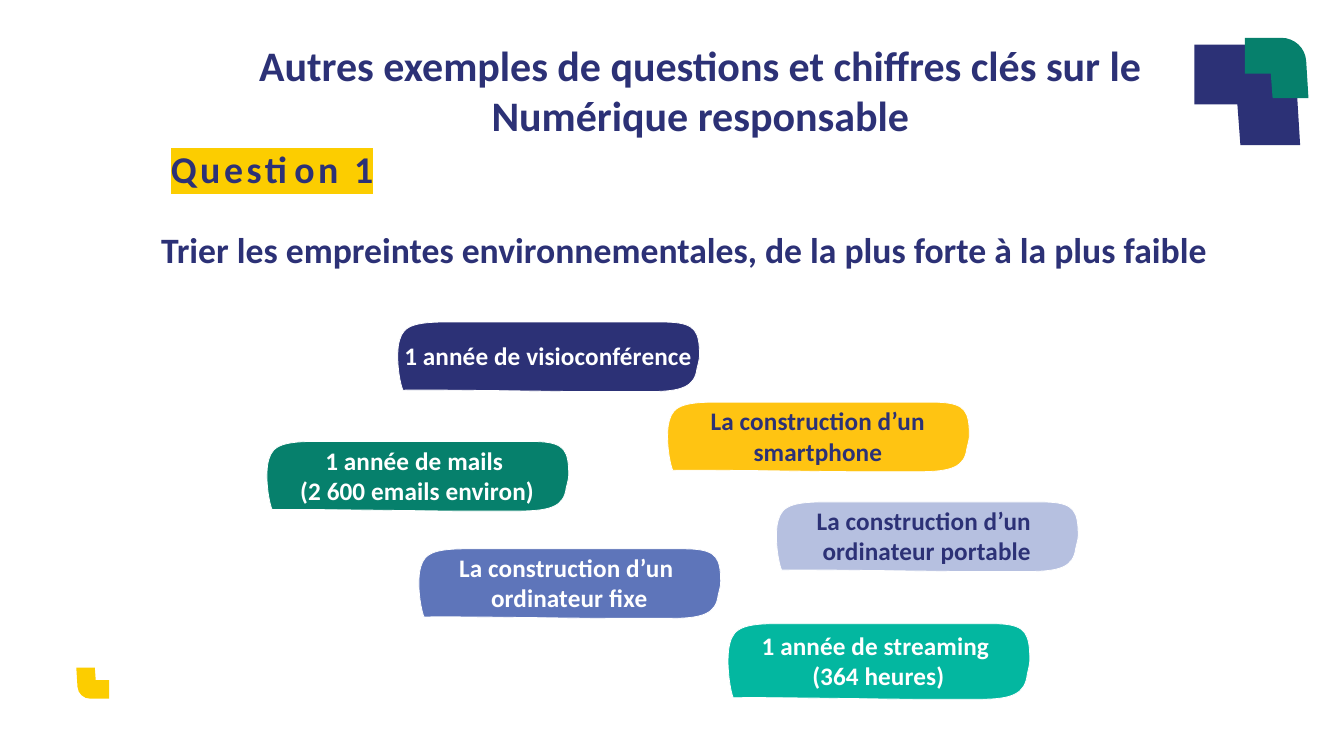
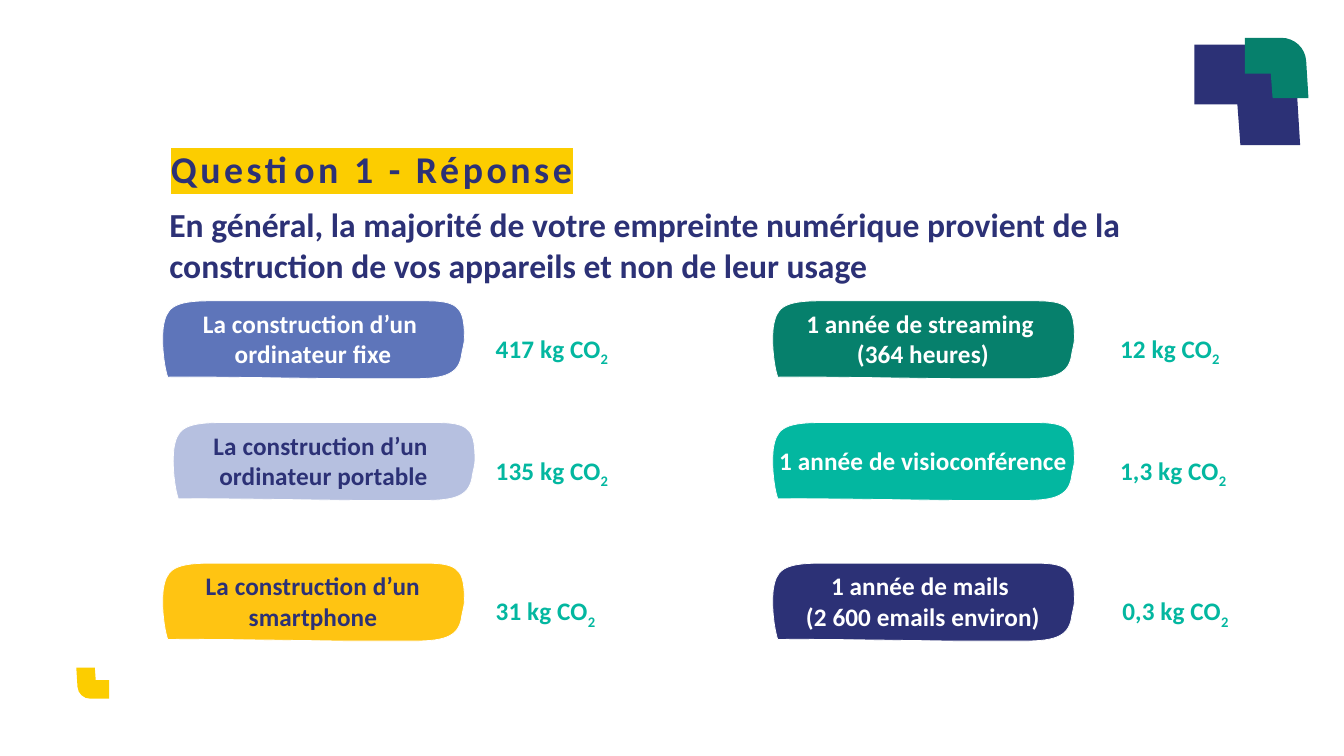
"""Build two quiz slides on the footprint of digital habits."""
from dataclasses import dataclass

from lxml import etree
from pptx import Presentation
from pptx import util as u
from pptx.dml.color import RGBColor
from pptx.enum import text
from pptx.oxml.ns import qn


@dataclass(frozen=True)
class Theme:
    """Colours, font and type sizes of the deck."""
    font: str = "Calibri"
    navy: str = "2C3176"
    green: str = "06806C"
    teal: str = "03B7A0"
    blue: str = "5E75BA"
    pale: str = "B6C0E0"
    amber: str = "FFC412"
    yellow: str = "FCCD00"
    white: str = "FFFFFF"
    title: int = 40
    tag: int = 36
    prompt: int = 34
    answer: int = 32
    label: int = 24


T = Theme()

DESKTOP = "La construction d’un \nordinateur fixe"
LAPTOP = "La construction d’un \nordinateur portable"
PHONE = "La construction d’un smartphone"
STREAMING = "1 année de streaming \n(364 heures)"
VIDEO = "1 année de visioconférence"
MAILS = "1 année de mails \n(2 600 emails environ)"

ELBOW_W, ELBOW_H = 1.4, 1.33
ELBOW = [(1.4, 1.33), (1.35, 0.51), (1.33, 0.22, 1.09, 0, 0.8, 0), (0, 0),
         (0, 0.79), (0.57, 0.79), (0.61, 1.33)]
BUBBLE_W, BUBBLE_DROP = 4.02, 0.02
BUBBLE = [(4.01, 0.35), (4.02, 0.54, 4.01, 0.53, 3.98, 0.67),
          (3.95, 0.93, 3.78, 1, 3.35, 1), (2.54, 1),
          (2.13, 1, 0.56, 0.97, 0.09, 0.98), (0.06, 0.91, 0, 0.61, 0.03, 0.34),
          (0.07, 0.1, 0.14, 0, 0.65, 0), (3.51, 0),
          (3.9, 0, 3.99, 0.08, 4.01, 0.35)]


def draw(s, box, outline, fill, sx=1, sy=1, dx=0, dy=0):
    """Draw an outline of points and cubic curves, scaled and shifted in a box."""
    left, top, w, h = map(u.Inches, box)
    fb = s.shapes.build_freeform(left, top, scale=1.0)
    fb.add_line_segments([(left + w, top), (left + w, top + h), (left, top + h)])
    sp = fb.convert_to_shape()
    geom = sp._element.find(".//" + qn("a:path"))
    for child in list(geom):
        geom.remove(child)
    for i, seg in enumerate(outline):
        kind = "a:moveTo" if i == 0 else "a:lnTo" if len(seg) == 2 else "a:cubicBezTo"
        step = etree.SubElement(geom, qn(kind))
        for px, py in zip(seg[::2], seg[1::2]):
            etree.SubElement(step, qn("a:pt"), x=str(u.Inches(dx + px * sx)),
                             y=str(u.Inches(dy + py * sy)))
    etree.SubElement(geom, qn("a:close"))
    sp.shadow.inherit = False
    sp.fill.solid()
    sp.fill.fore_color.rgb = RGBColor.from_string(fill)
    sp.line.fill.background()
    return sp


def write(sp, wording, size, color=T.navy, align=text.PP_ALIGN.LEFT,
          anchor=text.MSO_ANCHOR.TOP, margins=(0, 0), wrap=True,
          spacing=0, highlight=None, sub=None):
    """Fill a shape with formatted text, one paragraph a line."""
    tf = sp.text_frame
    tf.word_wrap, tf.vertical_anchor = wrap, anchor
    tf.auto_size = text.MSO_AUTO_SIZE.NONE
    tf.margin_left = tf.margin_right = u.Inches(margins[0])
    tf.margin_top = tf.margin_bottom = u.Inches(margins[1])
    for i, line in enumerate(wording.split("\n")):
        p = tf.paragraphs[0] if i == 0 else tf.add_paragraph()
        p.alignment = align
        for part in (line, sub):
            if part is None:
                continue
            r = p.add_run()
            r.text = part
            f = r.font
            f.size, f.bold = u.Pt(size), True
            f.color.rgb = RGBColor.from_string(color)
            rpr = r._r.get_or_add_rPr()
            if spacing:
                rpr.set("spc", str(round(spacing * 100)))
            if part is sub:
                rpr.set("baseline", "-25000")
            if highlight:
                hl = etree.SubElement(rpr, qn("a:highlight"))
                etree.SubElement(hl, qn("a:srgbClr"), val=highlight)
            f.name = T.font


def place(sp, box):
    """Move a shape into a box of left, top, width and height."""
    sp.left, sp.top, sp.width, sp.height = map(u.Inches, box)
    return sp


def add_text(s, box, wording, size, **fmt):
    """Add a text box."""
    write(s.shapes.add_textbox(*map(u.Inches, box)), wording, size, **fmt)


def add_marks(s):
    """Draw the corner marks shared by all slides."""
    for x, y, k, fill in ((15.8, 0.59, 1, T.navy), (16.47, 0.5, 0.6, T.green)):
        draw(s, (x, y, ELBOW_W * k, ELBOW_H * k), ELBOW, fill, k, k)
    k = 0.31
    w, h = ELBOW_W * k, ELBOW_H * k
    draw(s, (1.01, 8.83, w, h), ELBOW, T.yellow, -k, -k, w, h)


def add_tag(sp, wording):
    """Write the highlighted question number."""
    place(sp, (2.26, 1.92, 6.63, 0.62))
    write(sp, wording, T.tag, margins=(0, 0.01), spacing=3.4, highlight=T.yellow)


def add_bubble(s, x, y, h, wording, fill):
    """Draw a rounded label with its text."""
    sp = draw(s, (x, y, BUBBLE_W, h), BUBBLE, fill, sy=h - 0.01, dy=BUBBLE_DROP)
    sp.line.color.rgb = RGBColor.from_string(T.white)
    sp.line.width = u.Pt(0.75)
    color = T.navy if fill in (T.amber, T.pale) else T.white
    write(sp, wording, T.label, color=color, align=text.PP_ALIGN.CENTER,
          anchor=text.MSO_ANCHOR.MIDDLE, margins=(0.1, 0.05), spacing=0.1)


def new_slide(prs):
    """Add a title-only slide with the shared marks."""
    s = prs.slides.add_slide(prs.slide_layouts[5])
    add_marks(s)
    return s


def question_slide(prs):
    """Ask to sort six footprints."""
    s = new_slide(prs)
    write(place(s.shapes.title, (2.88, 0.52, 12.77, 1.35)),
          "Autres exemples de questions et chiffres clés sur le Numérique responsable",
          T.title, align=text.PP_ALIGN.CENTER)
    add_tag(s.shapes.add_textbox(0, 0, 0, 0), "Question 1")
    add_text(s, (2.13, 3.02, 15.18, 1.14),
             "Trier les empreintes environnementales, de la plus forte à la plus faible",
             T.prompt)
    for x, y, h, wording, fill in (
            (8.81, 5.3, 0.93, PHONE, T.amber), (5.52, 7.24, 0.93, DESKTOP, T.blue),
            (10.25, 6.62, 0.93, LAPTOP, T.pale), (5.24, 4.24, 0.93, VIDEO, T.navy),
            (9.61, 8.23, 1.01, STREAMING, T.teal), (3.51, 5.82, 0.93, MAILS, T.green)):
        add_bubble(s, x, y, h, wording, fill)


def answer_slide(prs):
    """Give the footprint of each item in two columns."""
    s = new_slide(prs)
    add_tag(s.shapes.title, "Question 1 - Réponse")
    add_text(s, (2.24, 2.7, 14.96, 1.08),
             "En général, la majorité de votre empreinte numérique provient de la "
             "construction de vos appareils et non de leur usage", T.answer)
    rows = (3.96, 5.57, 7.43)
    columns = (
        ((2.13, DESKTOP, T.blue, 6.46, "417"), (2.27, LAPTOP, T.pale, 6.46, "135"),
         (2.13, PHONE, T.amber, 6.46, "31")),
        ((10.2, STREAMING, T.green, 14.72, "12"), (10.2, VIDEO, T.teal, 14.72, "1,3"),
         (10.2, MAILS, T.navy, 14.75, "0,3")))
    for items in columns:
        for y, (x, wording, fill, value_x, kg) in zip(rows, items):
            add_bubble(s, x, y, 1.04, wording, fill)
            add_text(s, (value_x, y + 0.4, 1.7, 0.5), f"{kg} kg CO", T.label,
                     color=T.teal, margins=(0.1, 0.05), wrap=False, spacing=0.1, sub="2")


def main():
    """Build and save the deck."""
    prs = Presentation()
    prs.slide_width, prs.slide_height = u.Inches(17.78), u.Inches(10)
    question_slide(prs)
    answer_slide(prs)
    prs.save("out.pptx")


if __name__ == "__main__":
    main()
